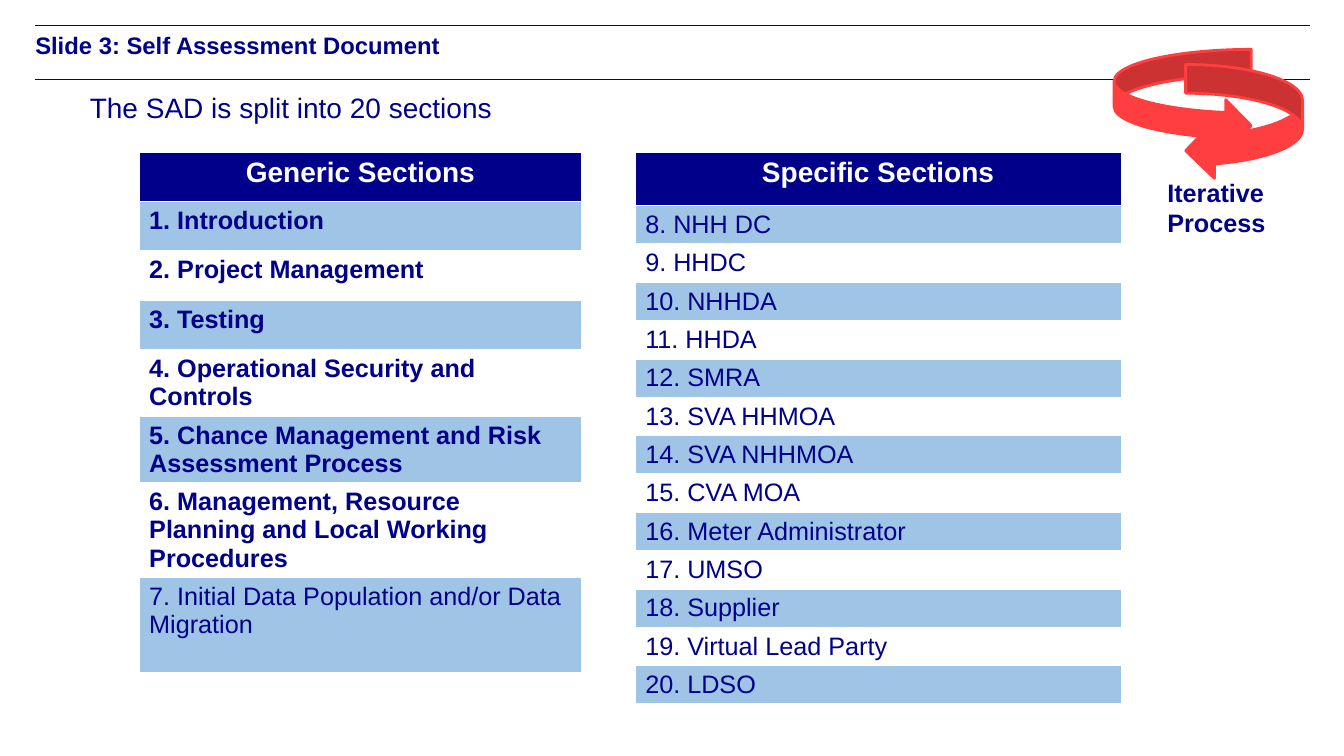
from lxml import etree
from pptx import Presentation
from pptx.dml.color import RGBColor
from pptx.enum.shapes import MSO_CONNECTOR, MSO_SHAPE
from pptx.enum.text import MSO_ANCHOR, MSO_AUTO_SIZE, PP_ALIGN
from pptx.oxml.ns import qn
from pptx.util import Pt

PX = 9144  # EMU per px, 100 px to the inch
FONT = "Arial"
NAVY = RGBColor(0x00, 0x00, 0x8B)
BAND = RGBColor(0xA0, 0xC4, 0xE5)
RED = RGBColor(0xFF, 0x3F, 0x3F)
WHITE = RGBColor(0xFF, 0xFF, 0xFF)

STRAIGHT = MSO_CONNECTOR.STRAIGHT
RIGHT_ARROW = MSO_SHAPE.CURVED_RIGHT_ARROW
LEFT_ARROW = MSO_SHAPE.CURVED_LEFT_ARROW
TOP = MSO_ANCHOR.TOP
NO_FIT = MSO_AUTO_SIZE.NONE
LEFT, CENTER = PP_ALIGN.LEFT, PP_ALIGN.CENTER

GENERIC = [
    "1. Introduction",
    "2. Project Management",
    "3. Testing",
    "4. Operational Security and Controls",
    "5. Chance Management and Risk Assessment Process",
    "6. Management, Resource Planning and Local Working Procedures",
    "7. Initial Data Population and/or Data Migration",
]
GENERIC_HEIGHTS = [49] * 5 + [66, 66, 94]
SPECIFIC = [
    "8. NHH DC", "9. HHDC", "10. NHHDA", "11. HHDA", "12. SMRA",
    "13. SVA HHMOA", "14. SVA NHHMOA", "15. CVA MOA",
    "16. Meter Administrator", "17. UMSO", "18. Supplier",
    "19. Virtual Lead Party", "20. LDSO",
]
SPECIFIC_HEIGHTS = [53] + [38] * len(SPECIFIC)


def emu(*lengths):
    return [length * PX for length in lengths]


def add_span(para, text, size, color=NAVY, bold=False):
    span = para.add_run()
    span.text = text
    span.font.name = FONT
    span.font.size = Pt(size)
    span.font.bold = bold
    span.font.color.rgb = color
    return span


def place(box, left, top, width, height):
    box.left, box.top, box.width, box.height = emu(left, top, width, height)
    frame = box.text_frame
    frame.word_wrap = True
    frame.auto_size = NO_FIT
    frame.vertical_anchor = TOP
    return frame


def add_rule(page, top):
    rule = page.shapes.add_connector(STRAIGHT, *emu(35, top, 1299, top))
    rule.line.color.rgb = NAVY
    rule.line.width = Pt(0.5)
    etree.SubElement(rule._element.spPr, qn("a:effectLst"))


def fill_title(page, text):
    frame = place(page.shapes.title, 35, 30, 1264, 49)
    frame.margin_left = frame.margin_top = 0
    frame.margin_right = frame.margin_bottom = 0
    para = frame.paragraphs[0]
    para.alignment = LEFT
    add_span(para, text, 17, bold=True)


def fill_body(page, text):
    frame = place(page.placeholders[1], 79, 85, 1150, 565)
    para = frame.paragraphs[0]
    props = para._p.get_or_add_pPr()
    props.set("marL", "0")
    props.set("indent", "0")
    etree.SubElement(props, qn("a:buNone"))
    para.space_before = Pt(0)
    add_span(para, text, 20)


def fill_cell(cell, text, size, fill, color=NAVY, bold=False, align=LEFT):
    cell.fill.solid()
    cell.fill.fore_color.rgb = fill
    para = cell.text_frame.paragraphs[0]
    para.alignment = align
    add_span(para, text, size, color, bold)


def add_section_table(page, left, width, heading, sections, heights, bold_count):
    """White cell borders come from the default table style."""
    table = page.shapes.add_table(
        len(heights), 1, *emu(left, 151, width, sum(heights))).table
    for row, height in zip(table.rows, heights):
        row.height = height * PX
    fill_cell(table.cell(0, 0), heading, 20, NAVY, WHITE, True, CENTER)
    for number, section in enumerate(sections, 1):
        fill_cell(table.cell(number, 0), section, 18,
                  BAND if number % 2 else WHITE, bold=number <= bold_count)


def add_label(page, text, left, top, width, height):
    box = page.shapes.add_textbox(*emu(left, top, width, height))
    frame = place(box, left, top, width, height)
    add_span(frame.paragraphs[0], text, 18, bold=True)


def add_arrow(page, kind, left, top, width, height):
    arrow = page.shapes.add_shape(kind, *emu(left, top, width, height))
    arrow.shadow.inherit = False
    arrow.fill.solid()
    arrow.fill.fore_color.rgb = RED
    arrow.line.color.rgb = RED
    arrow.line.width = Pt(2)


def main():
    deck = Presentation()
    deck.slide_width, deck.slide_height = emu(1333, 750)
    page = deck.slides.add_slide(deck.slide_layouts[1])

    # Heading between two rules, then the lead line
    for top in (25, 79):
        add_rule(page, top)
    fill_title(page, "Slide 3: Self Assessment Document")
    fill_body(page, "The SAD is split into 20 sections")

    # Section lists
    add_section_table(page, 138, 439, "Generic Sections",
                      GENERIC, GENERIC_HEIGHTS, bold_count=6)
    add_section_table(page, 630, 482, "Specific Sections",
                      SPECIFIC, SPECIFIC_HEIGHTS, bold_count=0)

    # Iteration loop
    add_label(page, "Iterative Process", 1148, 171, 180, 70)
    add_arrow(page, RIGHT_ARROW, 1105, 49, 136, 101)
    add_arrow(page, LEFT_ARROW, 1176, 64, 116, 114)

    deck.save("out.pptx")


if __name__ == "__main__":
    main()
